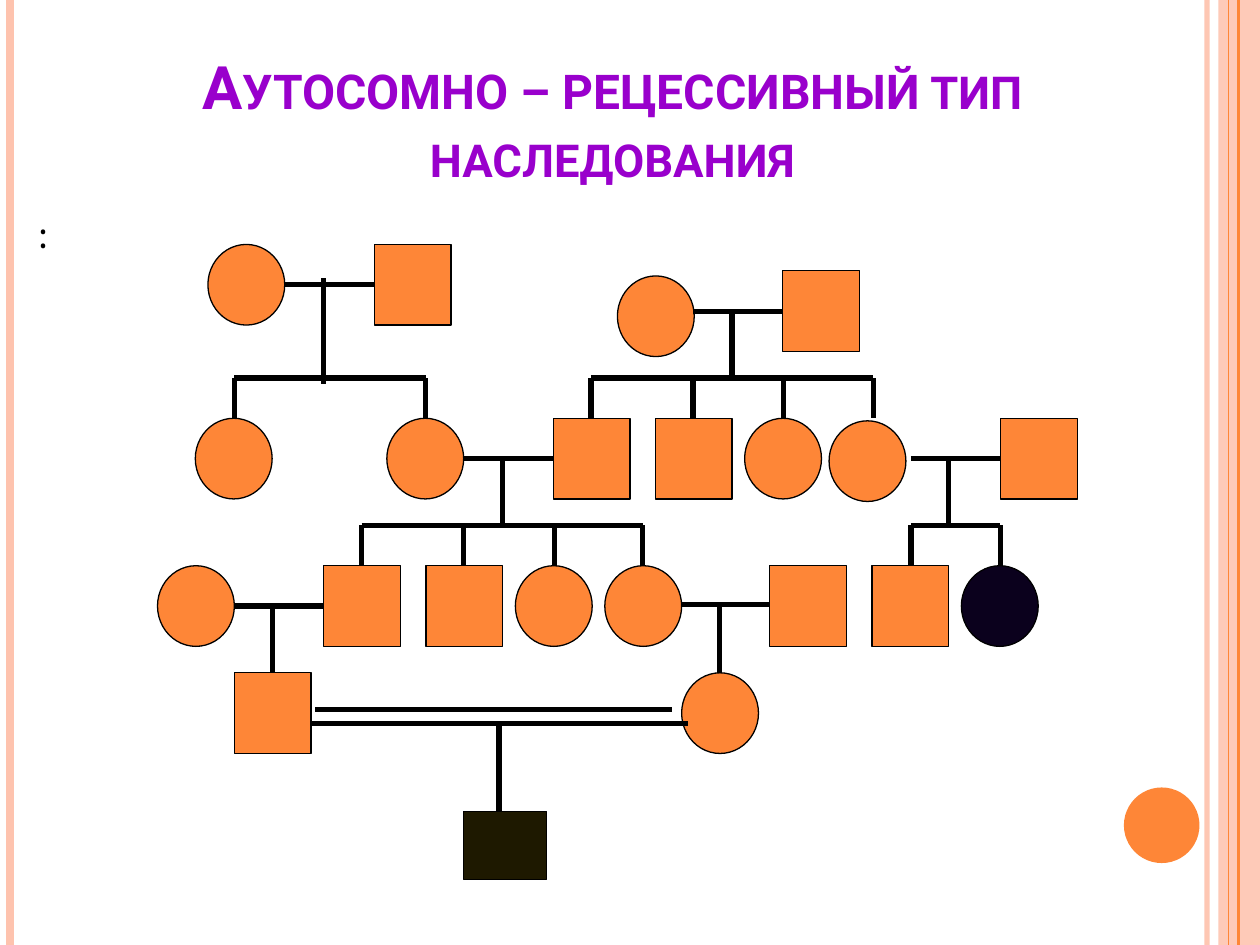
import pptx
import pptx.util
import pptx.dml.color
import pptx.enum.shapes
import pptx.enum.text
import pptx.oxml
import pptx.oxml.ns
import lxml.etree

WIDTH, HEIGHT = 10, 7.5
ORANGE, PEACH, BLACK, PURPLE = "FE8637", "FEC3AE", "000000", "9900CC"
PERSON_WIDTH, PERSON_HEIGHT = 0.61, 0.64

TITLE = [("Аутосомно – рецессивный", 34.2), (" ", 30.6), ("тип наследования", 32.4)]

# Frame lines: x, colour, weight, opacity in percent
FRAME_LINES = [(9.58, PEACH, 3, 93), (0.08, PEACH, 4.5, 100),
               (9.83, ORANGE, 1.5, 100), (9.75, ORANGE, 0.75, 100)]

# Generations: top edge, left edges of women (circles), left edges of men (squares)
GENERATIONS = [
    (1.94, [1.65], [2.97]),
    (2.19, [4.9], []),
    (2.15, [], [6.21]),
    (3.32, [1.55, 3.07, 5.91], [4.39, 5.2, 7.94]),
    (3.34, [6.58], []),
    (4.49, [1.25, 4.09, 4.8], [2.57, 3.38, 6.11, 6.92]),
    (5.34, [5.41], [1.86]),
]

# Marriages: left x, right x, y
MARRIAGES = [(2.26, 2.97, 2.26), (5.5, 6.21, 2.47), (3.68, 4.39, 3.64),
             (7.23, 7.94, 3.64), (1.86, 2.57, 4.81), (5.41, 6.11, 4.8),
             (2.47, 5.46, 5.74), (2.5, 5.33, 5.63)]

# Descents: x, top, bottom
DESCENTS = [(2.57, 2.21, 3.05), (5.81, 2.47, 3), (3.99, 3.64, 4.17), (7.53, 3.64, 4.17),
            (2.16, 4.81, 5.34), (5.71, 4.81, 5.34), (3.96, 5.74, 6.44)]

# Sibling groups: y of the bar, x of each child
SIBLINGS = [(3, [1.86, 3.38]), (3, [4.69, 5.5, 6.22, 6.93]),
            (4.17, [2.87, 3.68, 4.4, 5.1]), (4.17, [7.23, 7.94])]
STEM = 0.32

presentation = pptx.Presentation()
presentation.slide_width = pptx.util.Inches(WIDTH)
presentation.slide_height = pptx.util.Inches(HEIGHT)
slide = presentation.slides.add_slide(presentation.slide_layouts[6])


def rgb(color):
    return pptx.dml.color.RGBColor.from_string(color)


def inches(*values):
    return [pptx.util.Inches(value) for value in values]


def set_opacity(fill, percent):
    color = fill._xPr.find(".//" + pptx.oxml.ns.qn("a:srgbClr"))
    alpha = lxml.etree.SubElement(color, pptx.oxml.ns.qn("a:alpha"))
    alpha.set("val", str(percent * 1000))


def add_line(x1, y1, x2, y2, color=BLACK, weight=3, opacity=100):
    line = slide.shapes.add_connector(
        pptx.enum.shapes.MSO_CONNECTOR.STRAIGHT, *inches(x1, y1, x2, y2))
    line.line.color.rgb = rgb(color)
    line.line.width = pptx.util.Pt(weight)
    if opacity < 100:
        set_opacity(line.line.fill, opacity)
    lxml.etree.SubElement(line._element.spPr, pptx.oxml.ns.qn("a:effectLst"))


def add_figure(kind, left, top, width=PERSON_WIDTH, height=PERSON_HEIGHT,
               color=ORANGE, outlined=True):
    shape = slide.shapes.add_shape(kind, *inches(left, top, width, height))
    shape.shadow.inherit = False
    shape.fill.solid()
    shape.fill.fore_color.rgb = rgb(color)
    if outlined:
        shape.line.color.rgb = rgb(BLACK)
        shape.line.width = pptx.util.Pt(0.75)
    else:
        shape.line.fill.background()
    return shape


def add_text(left, top, width, height, runs, font, color, heading=False):
    frame = slide.shapes.add_textbox(*inches(left, top, width, height)).text_frame
    frame.word_wrap = True
    paragraph = frame.paragraphs[0]
    if heading:
        frame.vertical_anchor = pptx.enum.text.MSO_ANCHOR.BOTTOM
        paragraph.alignment = pptx.enum.text.PP_ALIGN.CENTER
    else:
        paragraph.space_before = pptx.util.Pt(6)
    for text, size in runs:
        run = paragraph.add_run()
        run.text = text
        run.font.name = font
        run.font.size = pptx.util.Pt(size)
        run.font.bold = heading
        run.font.color.rgb = rgb(color)
        if heading:
            run._r.get_or_add_rPr().set("cap", "small")


CIRCLE = pptx.enum.shapes.MSO_SHAPE.OVAL
SQUARE = pptx.enum.shapes.MSO_SHAPE.RECTANGLE

# Frame of the slide
band = add_figure(SQUARE, 9.67, 0, 0.33, HEIGHT, PEACH, outlined=False)
set_opacity(band.fill, 87)
for x, color, weight, opacity in FRAME_LINES:
    add_line(x, 0, x, HEIGHT, color, weight, opacity)
add_figure(CIRCLE, 8.92, 6.25, 0.6, 0.6, outlined=False)

# Title and body text
add_text(0.5, 0.3, 8.72, 1.25, TITLE, "Roboto", PURPLE, heading=True)
add_text(0.2, 1.59, 4.11, 0.66, [(":", 24)], "Cambria", BLACK)

# People
for top, women, men in GENERATIONS:
    for left in women:
        add_figure(CIRCLE, left, top)
    for left in men:
        add_figure(SQUARE, left, top)

# Affected people
add_figure(CIRCLE, 7.63, 4.49, color="0B011D")
add_figure(SQUARE, 3.68, 6.44, 0.66, 0.54, color="1E1900")

# Family lines
for left, right, y in MARRIAGES:
    add_line(left, y, right, y)
for x, top, bottom in DESCENTS:
    add_line(x, top, x, bottom)
for y, children in SIBLINGS:
    add_line(children[0], y, children[-1], y)
    for x in children:
        add_line(x, y, x, y + STEM)

presentation.save("out.pptx")
